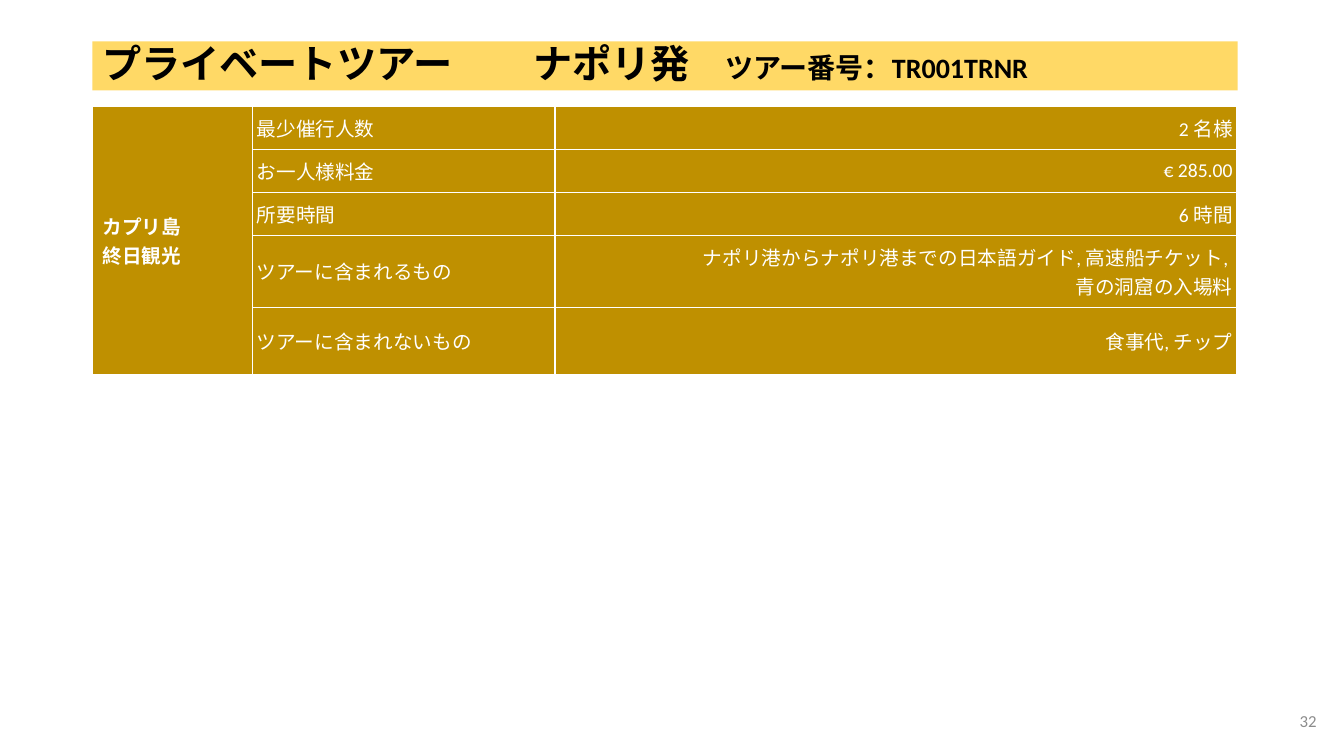
import pptx
import pptx.util
import pptx.dml.color
import pptx.enum.shapes
import pptx.enum.text
import pptx.oxml.ns
from lxml import etree

Pt = pptx.util.Pt
Align = pptx.enum.text.PP_ALIGN
Anchor = pptx.enum.text.MSO_ANCHOR
qn = pptx.oxml.ns.qn


def color(code):
    return pptx.dml.color.RGBColor.from_string(code)


class TourSlide:
    font = "Calibri"
    gold = "BF9000"
    yellow = "FFD966"
    white = "FFFFFF"
    black = "000000"
    gray = "8C8C8C"

    def __init__(self, deck):
        self.page = deck.slides.add_slide(deck.slide_layouts[6])

    def style(self, para, code, size=None, bold=False, align=Align.LEFT):
        para.alignment = align
        para.font.name = self.font
        para.font.bold = bold
        para.font.color.rgb = color(code)
        if size:
            para.font.size = Pt(size)

    def title(self, left, top, width, height, spans, tab_stops):
        box = self.page.shapes.add_shape(
            pptx.enum.shapes.MSO_SHAPE.RECTANGLE, Pt(left), Pt(top), Pt(width), Pt(height))
        box.shadow.inherit = False
        box.fill.solid()
        box.fill.fore_color.rgb = color(self.yellow)
        box.line.fill.background()
        box.text_frame.vertical_anchor = Anchor.MIDDLE
        para = box.text_frame.paragraphs[0]
        self.style(para, self.black, bold=True)
        para.line_spacing = 0.9
        for text, size in spans:
            span = para.add_run()
            span.text = text
            span.font.size = Pt(size)
        tabs = etree.Element(qn("a:tabLst"))
        for stop in tab_stops:
            etree.SubElement(tabs, qn("a:tab"), pos=str(Pt(stop)), algn="l")
        para.font._element.addprevious(tabs)

    def label(self, left, top, width, height, text):
        box = self.page.shapes.add_textbox(Pt(left), Pt(top), Pt(width), Pt(height))
        box.text_frame.word_wrap = True
        box.text_frame.vertical_anchor = Anchor.MIDDLE
        para = box.text_frame.paragraphs[0]
        para.text = text
        self.style(para, self.gray, 12, align=Align.RIGHT)

    def borders(self, cell):
        props = cell._tc.get_or_add_tcPr()
        for index, side in enumerate(("lnL", "lnR", "lnT", "lnB")):
            line = etree.Element(qn("a:" + side), w=str(Pt(1)))
            fill = etree.SubElement(line, qn("a:solidFill"))
            etree.SubElement(fill, qn("a:srgbClr"), val=self.white)
            props.insert(index, line)

    def fill_cell(self, cell, text, bold=False, align=Align.LEFT):
        cell.text = text
        for para in cell.text_frame.paragraphs:
            self.style(para, self.white, 14, bold, align)

    def table(self, left, top, widths, heights, tour, rows):
        frame = self.page.shapes.add_table(
            len(heights), len(widths), Pt(left), Pt(top), Pt(sum(widths)), Pt(sum(heights)))
        table = frame.table
        table.first_row = False
        table.horz_banding = False
        for column, width in zip(table.columns, widths):
            column.width = Pt(width)
        for row, height in zip(table.rows, heights):
            row.height = Pt(height)
        for cell in table.iter_cells():
            cell.fill.solid()
            cell.fill.fore_color.rgb = color(self.gold)
            cell.vertical_anchor = Anchor.MIDDLE
            self.borders(cell)
        table.cell(0, 0).merge(table.cell(len(heights) - 1, 0))
        self.fill_cell(table.cell(0, 0), tour, bold=True)
        for row, texts in enumerate(rows):
            for column, (text, align) in enumerate(zip(texts, (Align.LEFT, Align.RIGHT)), 1):
                cell = table.cell(row, column)
                cell.margin_left = cell.margin_right = Pt(3)
                cell.margin_top = cell.margin_bottom = Pt(3)
                self.fill_cell(cell, text, align=align)


def main():
    deck = pptx.Presentation()
    deck.slide_width, deck.slide_height = Pt(960), Pt(540)
    slide = TourSlide(deck)
    slide.title(66, 29.5, 818, 35,
                [("プライベートツアー\tナポリ発\t", 28), ("ツアー番号：TR001TRNR", 20)],
                [308, 445])
    slide.table(66, 76.3, [114.5, 216, 487], [30.6, 30.6, 30.6, 51.4, 47.8],
                "カプリ島\n終日観光", [
                    ("最少催行人数", "2 名様"),
                    ("お一人様料金", "€ 285.00"),
                    ("所要時間", "6 時間"),
                    ("ツアーに含まれるもの",
                     "ナポリ港からナポリ港までの日本語ガイド, 高速船チケット, \n青の洞窟の入場料"),
                    ("ツアーに含まれないもの", "食事代, チップ"),
                ])
    slide.label(731.5, 500.5, 216, 28.8, "32")
    deck.save("out.pptx")


if __name__ == "__main__":
    main()
